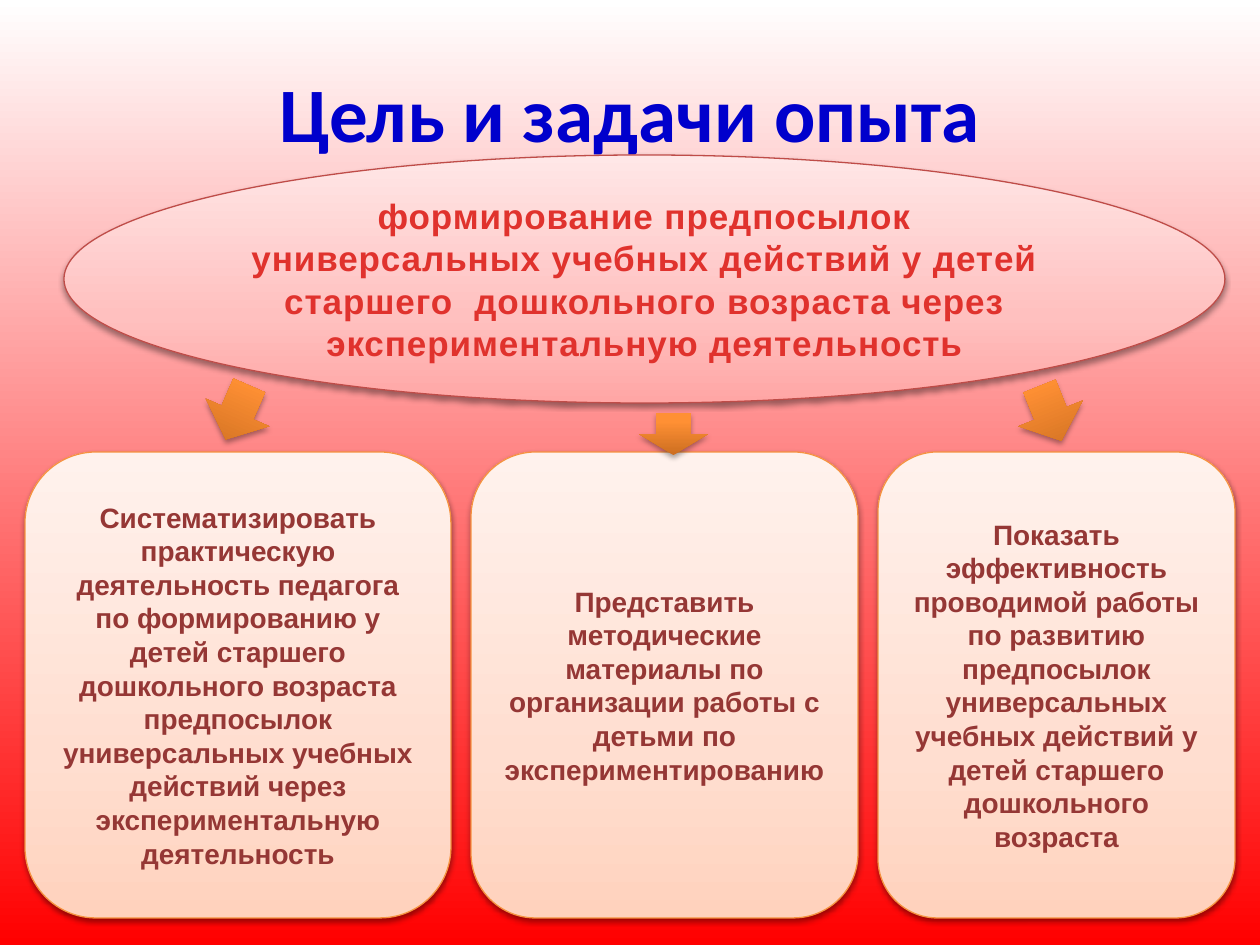
from dataclasses import dataclass

from lxml import etree
from pptx import Presentation
from pptx.dml.color import RGBColor
from pptx.enum.shapes import MSO_SHAPE
from pptx.enum.text import MSO_ANCHOR, PP_ALIGN
from pptx.oxml.ns import qn
from pptx.util import Emu, Pt

ELLIPSE = MSO_SHAPE.OVAL
CARD = MSO_SHAPE.ROUNDED_RECTANGLE
ARROW = MSO_SHAPE.DOWN_ARROW
CENTER = PP_ALIGN.CENTER
MIDDLE = MSO_ANCHOR.MIDDLE

EMU_PER_PX = 914400 / 126
UPWARD = 90
DOWNWARD = 270

Stops = tuple[tuple[int, str], ...]


@dataclass(frozen=True)
class Theme:
    backdrop: Stops = ((0, "FF0000"), (100, "FFFFFF"))
    goal_fill: Stops = ((0, "FFA6A5"), (35, "FFC0BF"), (100, "FFE7E7"))
    goal_text: Stops = ((25, "E0322D"), (100, "A2201C"))
    goal_line: str = "BF4C48"
    task_fill: Stops = ((0, "FFD2BD"), (35, "FFDED0"), (100, "FFF2ED"))
    task_text: str = "953735"
    task_line: str = "F69240"
    arrow_fill: Stops = ((0, "CC6E20"), (80, "FF9034"), (100, "FF9136"))
    title_text: str = "0000CC"
    shadow: str = "000000"
    title_font: str = "Calibri"
    body_font: str = "Arial"
    title_size: int = 44
    goal_size: int = 20
    task_size: int = 16
    line_width: float = 0.75


@dataclass(frozen=True)
class Box:
    left: int
    top: int
    width: int
    height: int

    def emu(self) -> list[Emu]:
        lengths = (self.left, self.top, self.width, self.height)
        return [Emu(round(length * EMU_PER_PX)) for length in lengths]


@dataclass(frozen=True)
class Task:
    width: int
    text: str


@dataclass(frozen=True)
class Pointer:
    box: Box
    rotation: float


THEME = Theme()
TITLE_BOX = Box(63, 38, 1134, 147)
GOAL_BOX = Box(64, 155, 1161, 248)
TASK_LEFT, TASK_TOP, TASK_HEIGHT, TASK_GAP = 25, 452, 466, 20

GOAL = (
    "формирование предпосылок универсальных учебных действий у детей "
    "старшего  дошкольного возраста через экспериментальную деятельность"
)
TASKS = (
    Task(426, "Систематизировать практическую деятельность педагога по "
              "формированию у детей старшего дошкольного возраста предпосылок "
              "универсальных учебных действий через экспериментальную деятельность"),
    Task(387, "Представить методические материалы по организации работы с "
              "детьми по экспериментированию"),
    Task(357, "Показать эффективность проводимой работы по развитию предпосылок "
              "универсальных учебных действий у детей старшего дошкольного возраста"),
)
POINTERS = (
    Pointer(Box(203, 383, 69, 59), 23.5),
    Pointer(Box(1016, 384, 69, 59), 338.2),
    Pointer(Box(639, 413, 69, 42), 0),
)


def paint_gradient(fill, owner, stops: Stops, angle: int = UPWARD) -> None:
    fill.gradient()
    fill.gradient_angle = angle
    stop_list = next(owner.iter(qn("a:gsLst")))
    for old_stop in list(stop_list):
        stop_list.remove(old_stop)
    for position, color in stops:
        stop = etree.SubElement(stop_list, qn("a:gs"), pos=str(position * 1000))
        etree.SubElement(stop, qn("a:srgbClr"), val=color)


def cast_shadow(shape, opacity: int, distance: float) -> None:
    shape.shadow.inherit = False
    effects = next(shape.element.iter(qn("a:effectLst")))
    shadow = etree.SubElement(
        effects, qn("a:outerShdw"), blurRad=str(Pt(3.1)), dist=str(Pt(distance)),
        dir="5400000", rotWithShape="0",
    )
    color = etree.SubElement(shadow, qn("a:srgbClr"), val=THEME.shadow)
    etree.SubElement(color, qn("a:alpha"), val=str(opacity * 1000))


def add_text(shape, text: str, font_name: str, size: int):
    frame = shape.text_frame
    frame.word_wrap = True
    frame.vertical_anchor = MIDDLE
    paragraph = frame.paragraphs[0]
    paragraph.alignment = CENTER
    run = paragraph.add_run()
    run.text = text
    run.font.name = font_name
    run.font.size = Pt(size)
    run.font.bold = True
    return run


def add_panel(slide, kind, box: Box, stops: Stops, line: str):
    panel = slide.shapes.add_shape(kind, *box.emu())
    paint_gradient(panel.fill, panel.element, stops)
    panel.line.color.rgb = RGBColor.from_string(line)
    panel.line.width = Pt(THEME.line_width)
    cast_shadow(panel, 38, 1.6)
    return panel


def add_title(slide) -> None:
    title = slide.shapes.title
    title.left, title.top, title.width, title.height = TITLE_BOX.emu()
    run = add_text(title, "Цель и задачи опыта", THEME.title_font, THEME.title_size)
    run.font.color.rgb = RGBColor.from_string(THEME.title_text)


def add_goal(slide) -> None:
    goal = add_panel(slide, ELLIPSE, GOAL_BOX, THEME.goal_fill, THEME.goal_line)
    run = add_text(goal, GOAL, THEME.body_font, THEME.goal_size)
    properties = run.font._element
    paint_gradient(run.font.fill, properties, THEME.goal_text, DOWNWARD)
    properties.set("spc", "50")


def add_tasks(slide) -> None:
    left = TASK_LEFT
    for task in TASKS:
        box = Box(left, TASK_TOP, task.width, TASK_HEIGHT)
        card = add_panel(slide, CARD, box, THEME.task_fill, THEME.task_line)
        run = add_text(card, task.text, THEME.body_font, THEME.task_size)
        run.font.color.rgb = RGBColor.from_string(THEME.task_text)
        left += task.width + TASK_GAP


def add_pointer(slide, pointer: Pointer) -> None:
    arrow = slide.shapes.add_shape(ARROW, *pointer.box.emu())
    arrow.rotation = pointer.rotation
    paint_gradient(arrow.fill, arrow.element, THEME.arrow_fill)
    arrow.line.fill.background()
    cast_shadow(arrow, 35, 1.8)


def main() -> None:
    deck = Presentation()
    _, _, deck.slide_width, deck.slide_height = Box(0, 0, 1260, 945).emu()
    slide = deck.slides.add_slide(deck.slide_layouts.get_by_name("Title Only"))
    paint_gradient(slide.background.fill, slide.element, THEME.backdrop)
    add_title(slide)
    add_goal(slide)
    add_tasks(slide)
    for pointer in POINTERS:
        add_pointer(slide, pointer)
    deck.save("out.pptx")


if __name__ == "__main__":
    main()
